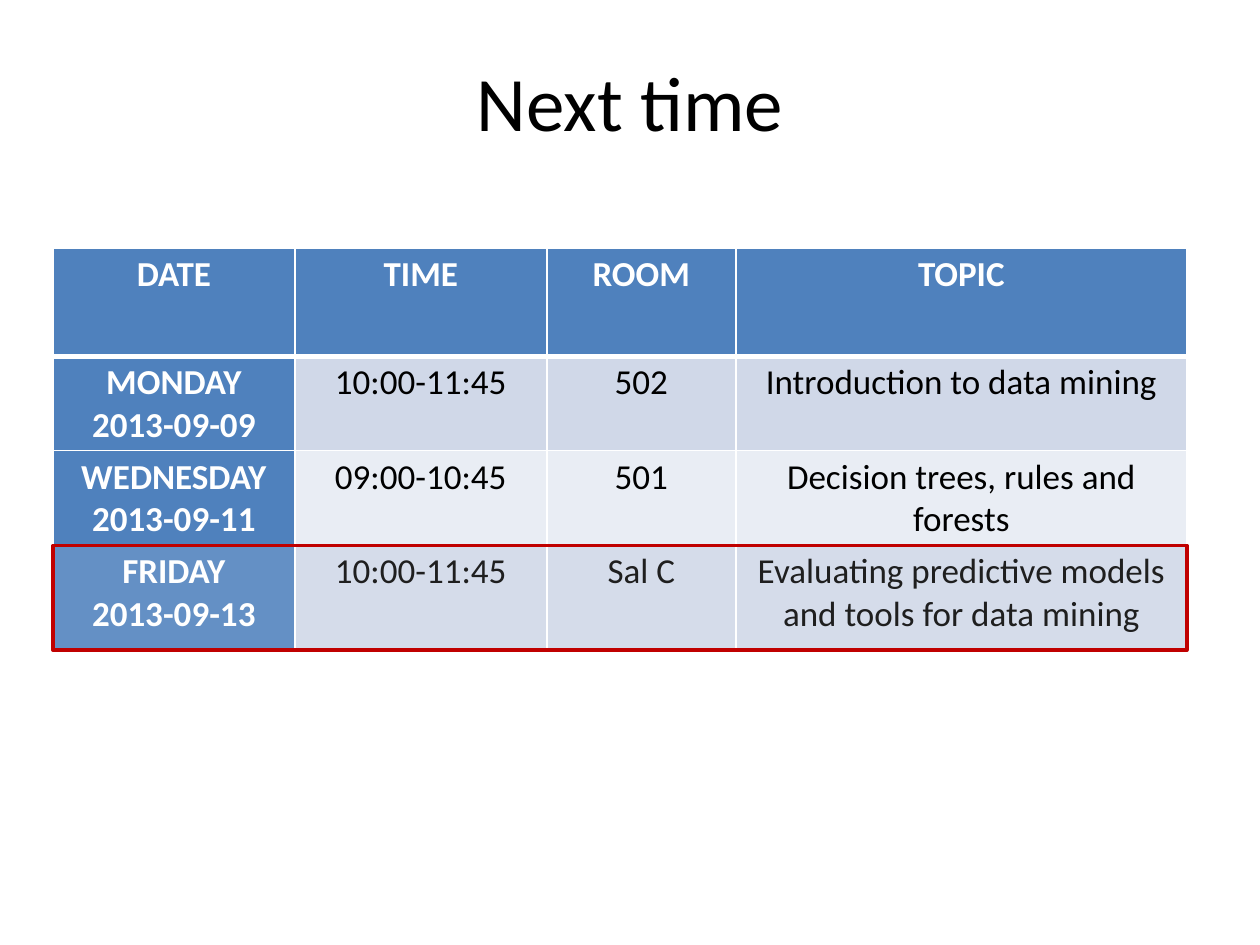
import pptx
import pptx.util
import pptx.dml.color
import pptx.enum.shapes
import pptx.enum.text
from lxml import etree

Inches, Pt = pptx.util.Inches, pptx.util.Pt
NS = "http://schemas.openxmlformats.org/drawingml/2006/main"

# Content
TITLE = "Next time"
SCHEDULE = [
    ("DATE", "TIME", "ROOM", "TOPIC"),
    ("MONDAY\n2013-09-09", "10:00-11:45", "502", "Introduction to data mining"),
    ("WEDNESDAY\n2013-09-11", "09:00-10:45", "501", "Decision trees, rules and forests"),
    ("FRIDAY\n2013-09-13", "10:00-11:45", "Sal C",
     "Evaluating predictive models and tools for data mining"),
]

# Layout in inches, and colours
LEFT, TOP = 0.42, 1.97
COLS = [1.92, 2, 1.5, 3.58]
ROWS = [0.86, 0.73, 0.75, 0.83]
HEAD, BANDS = "4F81BD", ("E9EDF4", "D0D8E8")
WHITE, BLACK, RED = "FFFFFF", "000000", "C00000"


def rgb(color):
    return pptx.dml.color.RGBColor.from_string(color)


def write(tf, text, size=20, color=BLACK, bold=False):
    tf.word_wrap = True
    for i, line in enumerate(text.split("\n")):
        p = tf.paragraphs[0] if i == 0 else tf.add_paragraph()
        p.alignment = pptx.enum.text.PP_ALIGN.CENTER
        r = p.add_run()
        r.text = line
        r.font.name, r.font.size, r.font.bold = "Calibri", Pt(size), bold
        r.font.color.rgb = rgb(color)


def set_borders(cell, **widths):
    """Draw white cell borders; they must precede the fill in tcPr."""
    tc_pr = cell._tc.get_or_add_tcPr()
    for i, (side, width) in enumerate(widths.items()):
        ln = etree.Element(f"{{{NS}}}ln{side}", w=str(Pt(width)))
        fill = etree.SubElement(ln, f"{{{NS}}}solidFill")
        etree.SubElement(fill, f"{{{NS}}}srgbClr", val=WHITE)
        tc_pr.insert(i, ln)


prs = pptx.Presentation()
prs.slide_width, prs.slide_height = Inches(10), Inches(7.5)
s = prs.slides.add_slide(prs.slide_layouts[6])

# Title
title = s.shapes.add_textbox(Inches(0.5), Inches(0.17), Inches(9), Inches(1.25))
title.text_frame.vertical_anchor = pptx.enum.text.MSO_ANCHOR.MIDDLE
write(title.text_frame, TITLE, size=44)

# Schedule table
table = s.shapes.add_table(len(ROWS), len(COLS), Inches(LEFT), Inches(TOP),
                           Inches(sum(COLS)), Inches(sum(ROWS))).table
for col, width in zip(table.columns, COLS):
    col.width = Inches(width)
for row, height in zip(table.rows, ROWS):
    row.height = Inches(height)
for i, texts in enumerate(SCHEDULE):
    for j, text in enumerate(texts):
        cell = table.cell(i, j)
        heading = i == 0 or j == 0
        cell.margin_left = cell.margin_right = Inches(0.04)
        cell.margin_top = cell.margin_bottom = Inches(0.04)
        cell.fill.solid()
        cell.fill.fore_color.rgb = rgb(HEAD if heading else BANDS[i % 2])
        set_borders(cell, L=1, R=1, T=3 if i == 1 else 1, B=3 if i == 0 else 1)
        write(cell.text_frame, text, color=WHITE if heading else BLACK, bold=heading)

# Translucent frame around the last row
frame = s.shapes.add_shape(pptx.enum.shapes.MSO_SHAPE.RECTANGLE,
                           Inches(LEFT), Inches(TOP + sum(ROWS[:-1]) + 0.02),
                           Inches(sum(COLS)), Inches(ROWS[-1]))
frame.shadow.inherit = False
frame.fill.solid()
frame.fill.fore_color.rgb = rgb(WHITE)
tint = frame._element.spPr.find(f"{{{NS}}}solidFill/{{{NS}}}srgbClr")
etree.SubElement(tint, f"{{{NS}}}alpha", val="12000")
frame.line.color.rgb = rgb(RED)
frame.line.width = Pt(2)

prs.save("out.pptx")
